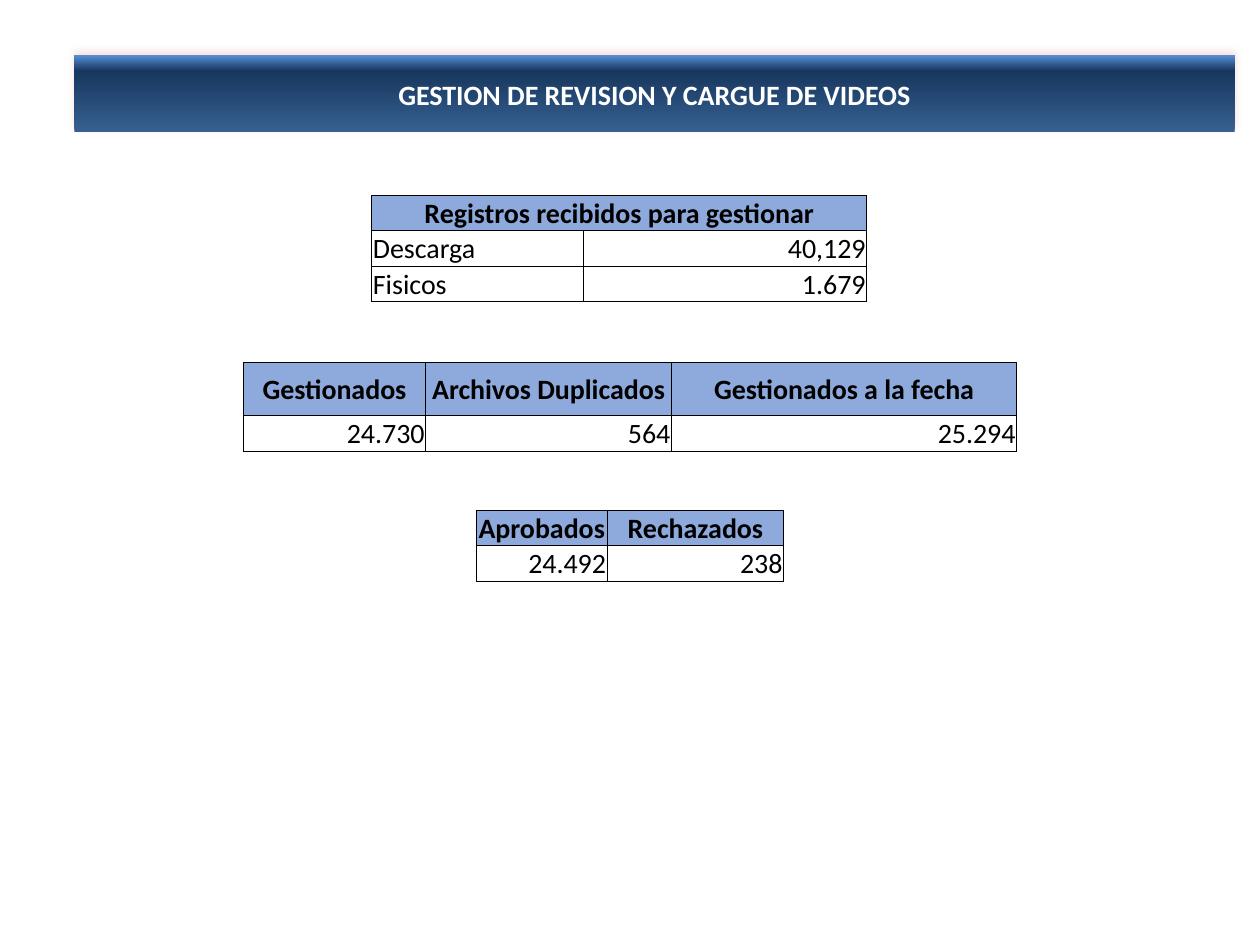
from lxml.etree import SubElement
from pptx import Presentation
from pptx.dml.color import RGBColor
from pptx.enum.text import MSO_ANCHOR, MSO_AUTO_SIZE, PP_ALIGN
from pptx.oxml import parse_xml
from pptx.oxml.ns import nsdecls, qn
from pptx.util import Inches, Pt

COLORS = {"header": "8EA9DB", "ink": "000000", "white": "FFFFFF", "glow": "E6B9B8"}
GRADIENT = [(0, "376092"), (80, "17375E"), (100, "558ED5")]
FONT, SIZE = "Calibri", 16
ROW = 0.28

TITLE = "GESTION DE REVISION Y CARGUE DE VIDEOS"
TABLES = [
    {"left": 1.93, "top": 2.88, "columns": [1.45, 1.95, 2.74], "header_height": 0.42,
     "header_anchor": MSO_ANCHOR.MIDDLE,
     "rows": [["Gestionados", "Archivos Duplicados", "Gestionados a la fecha"],
              ["24.730", "564", "25.294"]]},
    {"left": 3.78, "top": 4.05, "columns": [1.04, 1.4],
     "rows": [["Aprobados", "Rechazados"], ["24.492", "238"]]},
    {"left": 2.95, "top": 1.55, "columns": [1.68, 2.25],
     "rows": [["Registros recibidos para gestionar"],
              ["Descarga", "40,129"], ["Fisicos", "1.679"]]},
]


def write(para, text, color, bold, align):
    para.alignment = align
    span = para.add_run()
    span.text = text
    span.font.name, span.font.size, span.font.bold = FONT, Pt(SIZE), bold
    span.font.color.rgb = RGBColor.from_string(COLORS[color])


def add_borders(cell):
    properties = cell._tc.get_or_add_tcPr()
    for index, side in enumerate(("lnL", "lnR", "lnT", "lnB")):
        properties.insert(index, parse_xml(
            f'<a:{side} {nsdecls("a")} w="{Pt(0.5)}"><a:solidFill>'
            f'<a:srgbClr val="{COLORS["ink"]}"/></a:solidFill></a:{side}>'))


def format_cell(cell, is_header, anchor):
    cell.margin_left = cell.margin_right = cell.margin_top = Inches(0.01)
    cell.margin_bottom = 0
    cell.vertical_anchor = anchor
    if is_header:
        cell.fill.solid()
        cell.fill.fore_color.rgb = RGBColor.from_string(COLORS["header"])
    else:
        cell.fill.background()
    add_borders(cell)


def add_data_table(page, data):
    rows, columns = data["rows"], data["columns"]
    heights = [data.get("header_height", ROW)] + [ROW] * (len(rows) - 1)
    frame = page.shapes.add_table(
        len(rows), len(columns), Inches(data["left"]), Inches(data["top"]),
        Inches(sum(columns)), Inches(sum(heights)))
    table = frame.table
    table.first_row = table.horz_banding = False
    for column, width in zip(table.columns, columns):
        column.width = Inches(width)
    for r, (texts, height) in enumerate(zip(rows, heights)):
        table.rows[r].height = Inches(height)
        is_header = r == 0
        anchor = data.get("header_anchor", MSO_ANCHOR.BOTTOM) if is_header else MSO_ANCHOR.BOTTOM
        for c in range(len(columns)):
            format_cell(table.cell(r, c), is_header, anchor)
        if len(texts) < len(columns):
            table.cell(r, 0).merge(table.cell(r, len(columns) - 1))
        for c, text in enumerate(texts):
            is_label = text.isalpha()
            align = PP_ALIGN.CENTER if is_header else PP_ALIGN.LEFT if is_label else PP_ALIGN.RIGHT
            write(table.cell(r, c).text_frame.paragraphs[0], text, "ink", is_header, align)


def add_banner(page):
    """Turn the title placeholder into a rounded gradient bar with a glow above it."""
    banner = page.shapes.title
    banner.left, banner.top = Inches(0.59), Inches(0.44)
    banner.width, banner.height = Inches(9.21), Inches(0.61)
    properties = banner.element.spPr
    properties.append(parse_xml(
        f'<a:prstGeom {nsdecls("a")} prst="roundRect"><a:avLst>'
        '<a:gd name="adj" fmla="val 36300"/></a:avLst></a:prstGeom>'))
    stops = "".join(f'<a:gs pos="{share * 1000}"><a:srgbClr val="{color}"/></a:gs>'
                    for share, color in GRADIENT)
    properties.append(parse_xml(
        f'<a:gradFill {nsdecls("a")} rotWithShape="1"><a:gsLst>{stops}</a:gsLst>'
        '<a:lin ang="16200000" scaled="0"/></a:gradFill>'))
    banner.line.fill.background()
    effects = SubElement(properties, qn("a:effectLst"))
    effects.append(parse_xml(
        f'<a:outerShdw {nsdecls("a")} blurRad="{Pt(4)}" dist="{Pt(3)}" dir="16200000" '
        f'rotWithShape="0"><a:srgbClr val="{COLORS["glow"]}"><a:alpha val="40000"/>'
        '</a:srgbClr></a:outerShdw>'))
    box = banner.text_frame
    box.word_wrap, box.auto_size = True, MSO_AUTO_SIZE.NONE
    box.vertical_anchor = MSO_ANCHOR.MIDDLE
    write(box.paragraphs[0], TITLE, "white", True, PP_ALIGN.CENTER)


def main():
    deck = Presentation()
    deck.slide_width, deck.slide_height = Inches(10), Inches(7.5)
    page = deck.slides.add_slide(deck.slide_layouts[5])
    for data in TABLES:
        add_data_table(page, data)
    add_banner(page)
    deck.save("out.pptx")


if __name__ == "__main__":
    main()
